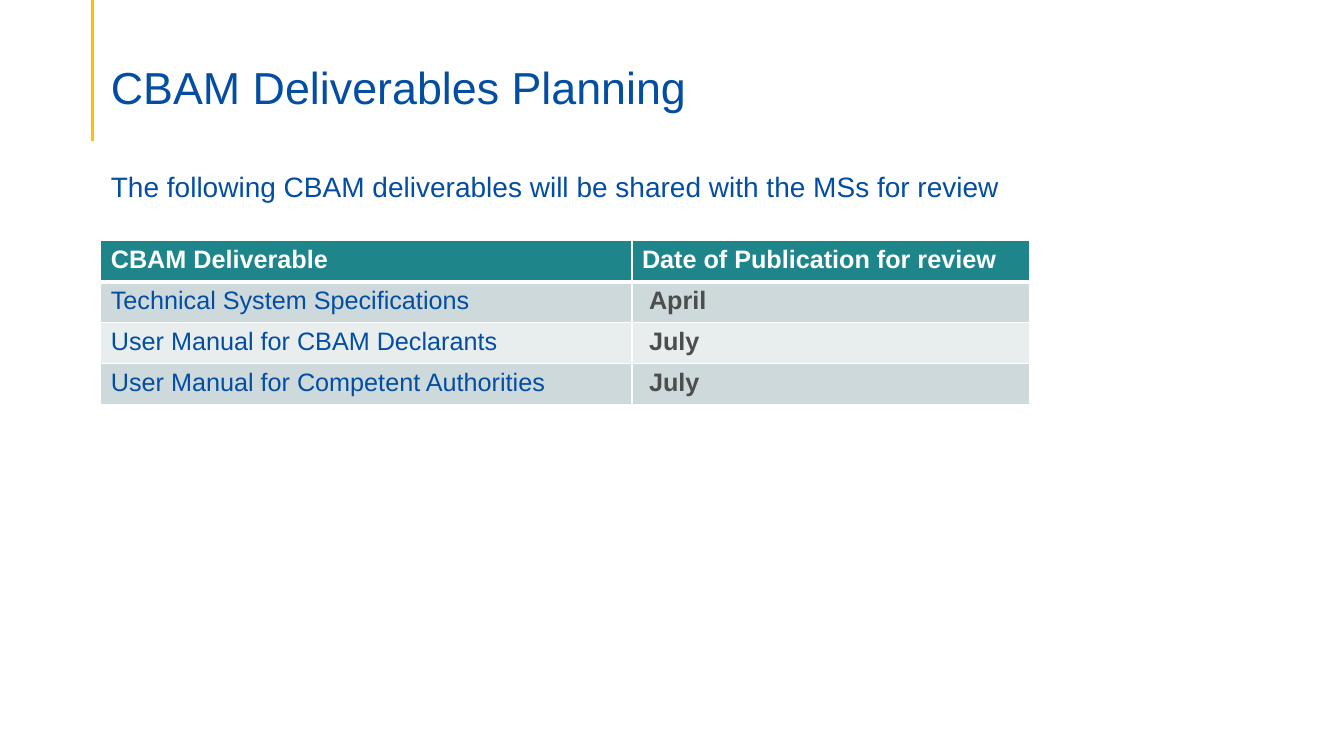
from lxml.etree import SubElement
from pptx import Presentation
from pptx.dml.color import RGBColor
from pptx.enum.shapes import MSO_CONNECTOR as Connector
from pptx.enum.text import MSO_ANCHOR as Anchor, PP_ALIGN as Align
from pptx.oxml.ns import qn
from pptx.util import Pt

BLUE, GREY, WHITE = "034EA2", "4D4D4D", "FFFFFF"
TEAL, BANDS = "1E858B", ("CDD9DA", "E8EDEE")
LEFT = 72
COLUMN_WIDTHS = (379.4, 283.7)
ROW_HEIGHT = 29.2
HEADER = ("CBAM Deliverable", "Date of Publication for review")
DELIVERABLES = (
    ("Technical System Specifications", "April"),
    ("User Manual for CBAM Declarants", "July"),
    ("User Manual for Competent Authorities", "July"),
)


def color(value):
    return RGBColor.from_string(value)


def write(frame, text, size=18, fill=BLUE, bold=False, after=0, spacing=1.0):
    """Put one left-aligned paragraph without a bullet in the frame."""
    para = frame.paragraphs[0]
    properties = para._p.get_or_add_pPr()
    properties.set("marL", "0")
    properties.set("indent", "0")
    SubElement(properties, qn("a:buNone"))
    para.alignment = Align.LEFT
    para.line_spacing = spacing
    para.space_before, para.space_after = Pt(0), Pt(after)
    span = para.add_run()
    span.text = text
    span.font.name, span.font.size, span.font.bold = "Arial", Pt(size), bold
    span.font.color.rgb = color(fill)


def place(box, left, top, width, height, anchor):
    box.left, box.top = Pt(left), Pt(top)
    box.width, box.height = Pt(width), Pt(height)
    box.text_frame.word_wrap = True
    box.text_frame.vertical_anchor = anchor
    return box.text_frame


def add_line(page, x, bottom, fill, width):
    line = page.shapes.add_connector(Connector.STRAIGHT, Pt(x), Pt(0), Pt(x), Pt(bottom))
    line.line.color.rgb = color(fill)
    line.line.width = Pt(width)
    SubElement(line._element.spPr, qn("a:effectLst"))


def add_borders(cell, top=1, bottom=1):
    properties = cell._tc.get_or_add_tcPr()
    for side, width in (("L", 1), ("R", 1), ("T", top), ("B", bottom)):
        border = SubElement(properties, qn(f"a:ln{side}"), w=str(Pt(width)))
        paint = SubElement(border, qn("a:solidFill"))
        SubElement(paint, qn("a:srgbClr"), val=WHITE)


def add_deliverables(page, top):
    rows = (HEADER,) + DELIVERABLES
    table = page.shapes.add_table(
        len(rows), len(HEADER), Pt(LEFT), Pt(top),
        Pt(sum(COLUMN_WIDTHS)), Pt(ROW_HEIGHT * len(rows))).table
    for column, width in zip(table.columns, COLUMN_WIDTHS):
        column.width = Pt(width)
    for r, texts in enumerate(rows):
        table.rows[r].height = Pt(ROW_HEIGHT)
        for c, text in enumerate(texts):
            cell = table.cell(r, c)
            add_borders(cell, top=3 if r == 1 else 1, bottom=3 if r == 0 else 1)
            cell.fill.solid()
            cell.fill.fore_color.rgb = color(BANDS[(r - 1) % 2] if r else TEAL)
            if r == 0:
                write(cell.text_frame, text, fill=WHITE, bold=True)
            elif c == 0:
                write(cell.text_frame, text)
            else:
                # Dates are set in slightly from their heading
                cell.margin_left = Pt(12.2)
                write(cell.text_frame, text, fill=GREY, bold=True)


def main():
    deck = Presentation()
    deck.slide_width, deck.slide_height = Pt(960), Pt(540)
    page = deck.slides.add_slide(deck.slide_layouts[1])

    # Accent line beside the title
    add_line(page, 66.24, 100.8, "FFC000", 2.25)

    # Title and introduction
    title = place(page.shapes.title, LEFT, 19.44, 828, 61.92, Anchor.BOTTOM)
    title.margin_bottom = Pt(0)
    write(title, "CBAM Deliverables Planning", size=32, spacing=0.9)
    body = place(page.placeholders[1], LEFT, 117.36, 858.96, 306, Anchor.TOP)
    write(body, "The following CBAM deliverables will be shared with the MSs for review",
          size=20, after=18)

    # Table of deliverables
    add_deliverables(page, 172)
    deck.save("out.pptx")


if __name__ == "__main__":
    main()
